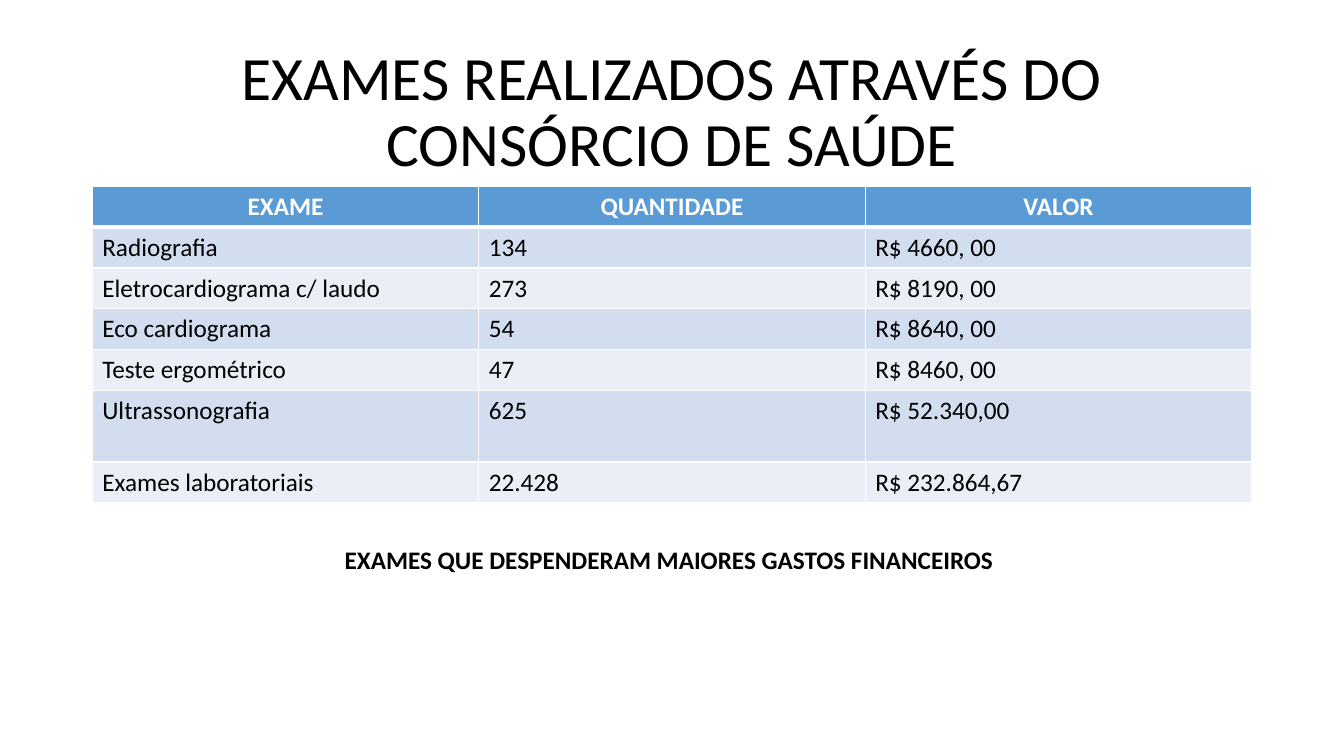
from lxml import etree
from pptx import Presentation, util as u
from pptx.dml.color import RGBColor
from pptx.enum import text
from pptx.oxml.ns import qn

# Content
TITLE = "EXAMES REALIZADOS ATRAVÉS DO CONSÓRCIO DE SAÚDE"
EXAMS = [
    ("EXAME", "QUANTIDADE", "VALOR"),
    ("Radiografia", "134", "R$ 4660, 00"),
    ("Eletrocardiograma c/ laudo", "273", "R$ 8190, 00"),
    ("Eco cardiograma", "54", "R$ 8640, 00"),
    ("Teste ergométrico", "47", "R$ 8460, 00"),
    ("Ultrassonografia", "625", "R$ 52.340,00"),
    ("Exames laboratoriais", "22.428", "R$ 232.864,67"),
]
CAPTION = "EXAMES QUE DESPENDERAM MAIORES GASTOS FINANCEIROS"

# Look
COLORS = {"ink": "000000", "paper": "FFFFFF", "header": "5B9BD5",
          "odd": "D2DEEF", "even": "EAEFF7"}
TITLE_FONT = {"name": "Calibri", "size": u.Pt(44), "bold": False}
BODY_FONT = {**TITLE_FONT, "size": u.Pt(18)}
BOLD_FONT = {**BODY_FONT, "bold": True}

# Layout in inches
WIDTH, HEIGHT = 13.33, 7.5
TABLE_W = 11.5
LEFT = (WIDTH - TABLE_W) / 2
TITLE_TOP, TITLE_H = 0.4, 1.45
ROW_H, TALL_ROW_H, TALL_ROW = 0.405, 0.71, 5
CAPTION_BOX = (3.32, 5.35, 6.7, 0.4)


def rgb(name):
    return RGBColor.from_string(COLORS[name])


def write(tf, words, font, color="ink", align=text.PP_ALIGN.LEFT):
    p = tf.paragraphs[0]
    p.alignment = align
    r = p.add_run()
    r.text = words
    for key, value in font.items():
        setattr(r.font, key, value)
    r.font.color.rgb = rgb(color)
    return p


def add_text(slide, box, words, font, wrap, **kw):
    tf = slide.shapes.add_textbox(*map(u.Inches, box)).text_frame
    tf.word_wrap = wrap
    return tf, write(tf, words, font, **kw)


def add_borders(cell, widths):
    """Solid white lines; the fill must be set afterwards."""
    tc_pr = cell._tc.get_or_add_tcPr()
    for side, width in widths.items():
        ln = etree.SubElement(tc_pr, qn("a:" + side), w=str(u.Pt(width)))
        fill = etree.SubElement(ln, qn("a:solidFill"))
        etree.SubElement(fill, qn("a:srgbClr"), val=COLORS["paper"])


prs = Presentation()
prs.slide_width, prs.slide_height = u.Inches(WIDTH), u.Inches(HEIGHT)
s = prs.slides.add_slide(prs.slide_layouts[6])

# Title
tf, p = add_text(s, (LEFT, TITLE_TOP, TABLE_W, TITLE_H), TITLE, TITLE_FONT,
                 True, align=text.PP_ALIGN.CENTER)
tf.vertical_anchor = text.MSO_ANCHOR.MIDDLE
p.line_spacing = 0.9

# Table of exams
heights = [TALL_ROW_H if i == TALL_ROW else ROW_H for i in range(len(EXAMS))]
table = s.shapes.add_table(
    len(EXAMS), len(EXAMS[0]),
    *map(u.Inches, (LEFT, TITLE_TOP + TITLE_H, TABLE_W, sum(heights)))).table
for i, (exam, height) in enumerate(zip(EXAMS, heights)):
    table.rows[i].height = u.Inches(height)
    header = i == 0
    fill = "header" if header else "odd" if i % 2 else "even"
    for j, words in enumerate(exam):
        cell = table.cell(i, j)
        add_borders(cell, {"lnL": 1, "lnR": 1, "lnT": 3 if i == 1 else 1,
                           "lnB": 3 if header else 1})
        cell.fill.solid()
        cell.fill.fore_color.rgb = rgb(fill)
        if header:
            write(cell.text_frame, words, BOLD_FONT, "paper", text.PP_ALIGN.CENTER)
        else:
            write(cell.text_frame, words, BODY_FONT)

# Caption
tf, p = add_text(s, CAPTION_BOX, CAPTION, BOLD_FONT, False)
tf.auto_size = text.MSO_AUTO_SIZE.SHAPE_TO_FIT_TEXT

prs.save("out.pptx")
